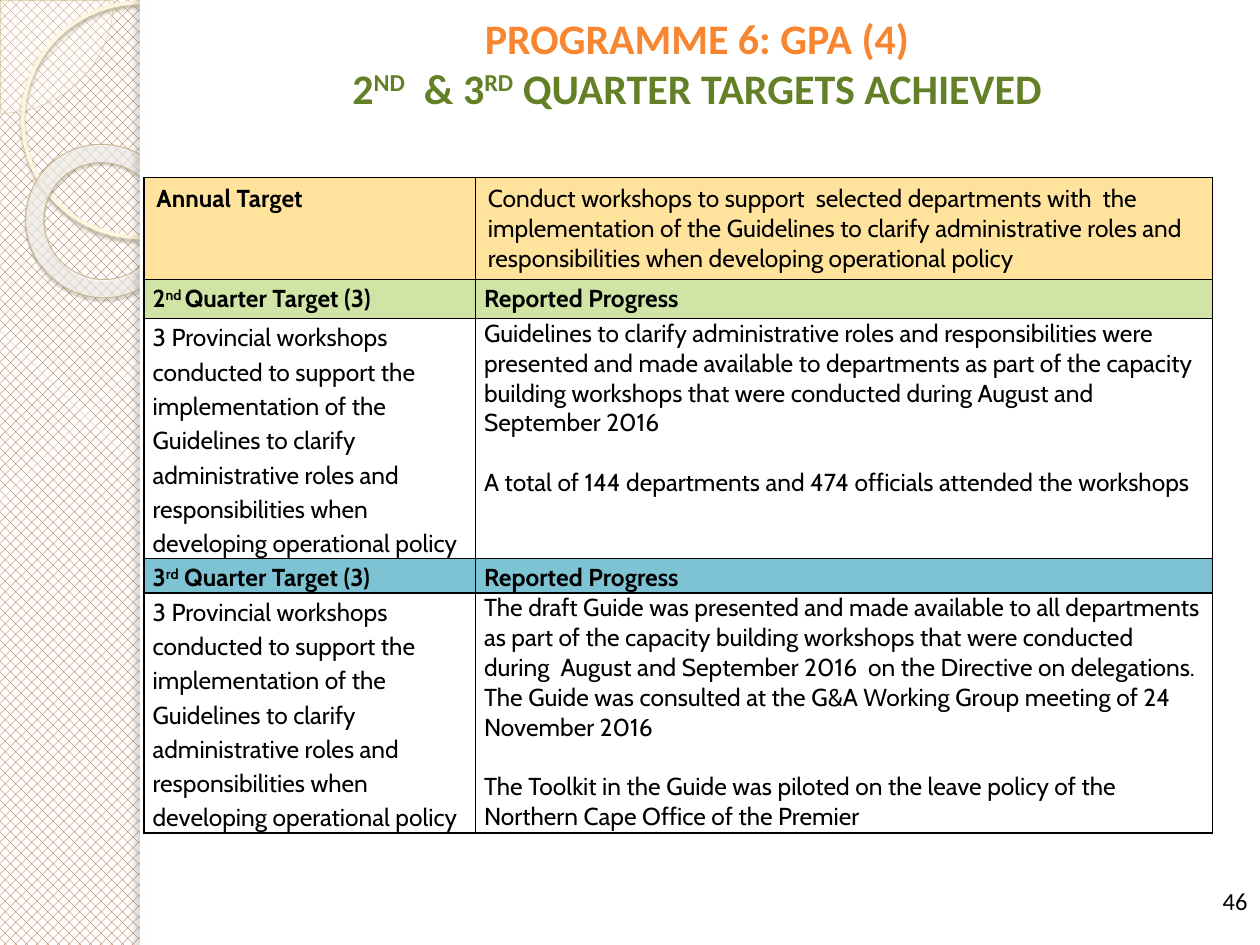
from dataclasses import dataclass

from pptx import Presentation
from pptx.dml.color import RGBColor as Rgb
from pptx.enum.dml import MSO_PATTERN as Pattern
from pptx.enum.shapes import MSO_SHAPE as Preset
from pptx.enum.text import MSO_ANCHOR as Anchor, PP_ALIGN as Align
from pptx.oxml import parse_xml
from pptx.oxml.ns import nsdecls, qn
from pptx.util import Pt


@dataclass(frozen=True)
class Theme:
    """Colours, fonts and type sizes of the slide."""
    hatch: str = "964305"
    paper: str = "FFFFFF"
    ink: str = "000000"
    orange: str = "F88631"
    green: str = "638026"
    annual: str = "FFE39D"
    second: str = "D0E4A6"
    third: str = "7EC3D4"
    wedge: str = "FEFAF4"
    wedge_edge: str = "D3C39F"
    ring: str = "FFF5DE"
    ring_shadow: str = "B0A68F"
    donut_edge: str = "C7B893"
    donut_shadow: str = "5A5444"
    donut_stops: tuple = ((0, "FFFCF6", 70), (70, "FFFEFB", 55), (100, "F0D28E", 60))
    edge_shadow: str = "736F63"
    heading_font: str = "Calibri"
    table_font: str = "Cabin"
    heading_size: int = 24
    body_size: int = 14


THEME = Theme()
SECTION_GAP = 17
WORKSHOPS = ("3 Provincial workshops conducted to support the implementation of the Guidelines "
             "to clarify administrative roles and responsibilities when developing operational policy")
ROWS = [
    (57, THEME.annual, True, ["Annual Target"],
     ["Conduct workshops to support  selected departments with  the implementation of the "
      "Guidelines to clarify administrative roles and responsibilities when developing "
      "operational policy"]),
    (22.3, THEME.second, True, ["2^nd ^Quarter Target (3)"], ["Reported Progress"]),
    (135.4, THEME.paper, False, [WORKSHOPS],
     ["Guidelines to clarify administrative roles and responsibilities were presented and made "
      "available to departments as part of the capacity building workshops that were conducted "
      "during August and September 2016",
      "A total of 144 departments and 474 officials attended the workshops"]),
    (18, THEME.third, True, ["3^rd^ Quarter Target (3)"], ["Reported Progress"]),
    (135.4, THEME.paper, False, [WORKSHOPS],
     ["The draft Guide was presented and made available to all departments as part of the "
      "capacity building workshops that were conducted during  August and September 2016  on the "
      "Directive on delegations. The Guide was consulted at the G&A Working Group meeting of 24 "
      "November 2016",
      "The Toolkit in the Guide was piloted on the leave policy of the Northern Cape Office of "
      "the Premier"]),
]


def apply(target, formats):
    """Set every attribute of a dict of format values."""
    for name, value in formats.items():
        setattr(target, name, value)


def colour_xml(colour, opacity):
    """Return a colour element with its opacity in percent."""
    return f'<a:srgbClr val="{colour}"><a:alpha val="{opacity * 1000}"/></a:srgbClr>'


def add_ornament(slide, preset, box, fill=None, opacity=100, line=None, shadow=None):
    """Add a decorative preset shape with optional fill, line and shadow."""
    ornament = slide.shapes.add_shape(preset, *map(Pt, box))
    ornament.shadow.inherit = False
    properties = ornament._element.spPr
    if fill:
        ornament.fill.solid()
        ornament.fill.fore_color.rgb = Rgb.from_string(fill)
        tint = properties.find(qn("a:solidFill"))
        tint.replace(tint[0], parse_xml(
            colour_xml(fill, opacity).replace(" ", f" {nsdecls('a')} ", 1)))
    else:
        ornament.fill.background()
    if line:
        ornament.line.color.rgb = Rgb.from_string(line[0])
        ornament.line.width = Pt(line[1])
    else:
        ornament.line.fill.background()
    if shadow:
        colour, strength, blur, distance, angle = shadow
        properties.find(qn("a:effectLst")).append(parse_xml(
            f'<a:outerShdw {nsdecls("a")} blurRad="{Pt(blur)}" dist="{Pt(distance)}" '
            f'dir="{angle * 60000}" algn="tl" rotWithShape="0">'
            f'{colour_xml(colour, strength)}</a:outerShdw>'))
    return ornament


def add_gradient(ornament, stops):
    """Fill a shape with a circular gradient of translucent stops."""
    properties = ornament._element.spPr
    stops_xml = "".join(f'<a:gs pos="{place * 1000}">{colour_xml(colour, opacity)}</a:gs>'
                        for place, colour, opacity in stops)
    properties.replace(properties.find(qn("a:noFill")), parse_xml(
        f'<a:gradFill {nsdecls("a")}><a:gsLst>{stops_xml}</a:gsLst><a:path path="circle">'
        '<a:fillToRect l="-408000" t="-50000" r="508000" b="150000"/></a:path></a:gradFill>'))


def add_runs(paragraph, text, font, size, colour, bold=False):
    """Add text whose parts between carets are superscript."""
    for order, part in enumerate(text.split("^")):
        run = paragraph.add_run()
        run.text = part
        apply(run.font, {"name": font, "size": Pt(size), "bold": bold})
        run.font.color.rgb = Rgb.from_string(colour)
        if order % 2:
            run.font._element.set("baseline", "30000")


def add_text(slide, box, align, anchor):
    """Add a wrapping text box and return its first paragraph."""
    frame = slide.shapes.add_textbox(*map(Pt, box)).text_frame
    apply(frame, {"word_wrap": True, "vertical_anchor": anchor})
    frame.paragraphs[0].alignment = align
    return frame.paragraphs[0]


def fill_cell(cell, paragraphs, colour, bold, spacing, tight):
    """Write, border and colour one table cell."""
    if tight:
        apply(cell, {"margin_left": Pt(5), "margin_right": Pt(5),
                     "margin_top": 0, "margin_bottom": 0})
    for order, text in enumerate(paragraphs):
        paragraph = cell.text_frame.add_paragraph() if order else cell.text_frame.paragraphs[0]
        apply(paragraph, {"line_spacing": spacing,
                          "space_before": Pt(SECTION_GAP if order else 0)})
        add_runs(paragraph, text, THEME.table_font, THEME.body_size, THEME.ink, bold)
    for side in "LRTB":
        cell._tc.get_or_add_tcPr().append(parse_xml(
            f'<a:ln{side} {nsdecls("a")} w="{Pt(1)}"><a:solidFill>'
            f'<a:srgbClr val="{THEME.ink}"/></a:solidFill></a:ln{side}>'))
    cell.fill.solid()
    cell.fill.fore_color.rgb = Rgb.from_string(colour)


def add_targets(slide):
    """Add the table of quarterly targets and progress."""
    height = sum(row[0] for row in ROWS)
    targets = slide.shapes.add_table(len(ROWS), 2, Pt(82.2), Pt(101.5), Pt(610.6), Pt(height)).table
    apply(targets, {"first_row": False, "horz_banding": False})
    for column, width in zip(targets.columns, (189.4, 421.2)):
        column.width = Pt(width)
    for order, (row_height, colour, heading, target, progress) in enumerate(ROWS):
        targets.rows[order].height = Pt(row_height)
        tight = order > 0
        fill_cell(targets.cell(order, 0), target, colour, heading, 1.15 if tight else 1, tight)
        fill_cell(targets.cell(order, 1), progress, colour, heading and tight,
                  1.15 if heading and tight else 1, tight)


def add_backdrop(slide):
    """Draw the hatched margin, its rings and the white page."""
    hatch = slide.background.fill
    hatch.patterned()
    hatch.pattern = Pattern.from_xml("pct40")
    hatch.fore_color.rgb = Rgb.from_string(THEME.hatch)
    hatch.back_color.rgb = Rgb.from_string(THEME.paper)
    wedge = add_ornament(slide, Preset.PIE, (-64, -64, 128.8, 128.8), THEME.wedge, 33,
                         (THEME.wedge_edge, 0.25))
    wedge.adjustments[0], wedge.adjustments[1] = 0, 54.02
    add_ornament(slide, Preset.OVAL, (13, 1.5, 134, 134), line=(THEME.ring, 2.15),
                 shadow=(THEME.ring_shadow, 85, 2, 2, 90))
    donut = add_ornament(slide, Preset.DONUT, (14.4, 82.8, 88.6, 87.1),
                         line=(THEME.donut_edge, 0.58),
                         shadow=(THEME.donut_shadow, 35, 1, 1.2, 75))
    donut.rotation = 38.6
    donut.adjustments[0] = 0.12
    add_gradient(donut, THEME.donut_stops)
    add_ornament(slide, Preset.RECTANGLE, (80, 0, 640, 540), THEME.paper)
    add_ornament(slide, Preset.RECTANGLE, (80, 0, 5.8, 540), THEME.paper,
                 shadow=(THEME.edge_shadow, 25, 3, 3, 180))


def main():
    """Build the slide and save it."""
    deck = Presentation()
    apply(deck, {"slide_width": Pt(720), "slide_height": Pt(540)})
    slide = deck.slides.add_slide(deck.slide_layouts[6])
    add_backdrop(slide)
    add_targets(slide)
    number = add_text(slide, (552, 502.5, 168, 37.5), Align.RIGHT, Anchor.TOP)
    add_runs(number, "46", THEME.heading_font, THEME.body_size, THEME.ink)
    title = add_text(slide, (76.5, 0, 643.5, 71.3), Align.CENTER, Anchor.MIDDLE)
    add_runs(title, "PROGRAMME 6: GPA (4)", THEME.heading_font, THEME.heading_size,
             THEME.orange, True)
    title.add_line_break()
    add_runs(title, "2^ND^  & 3^RD^ QUARTER TARGETS ACHIEVED", THEME.heading_font,
             THEME.heading_size, THEME.green, True)
    deck.save("out.pptx")


if __name__ == "__main__":
    main()
